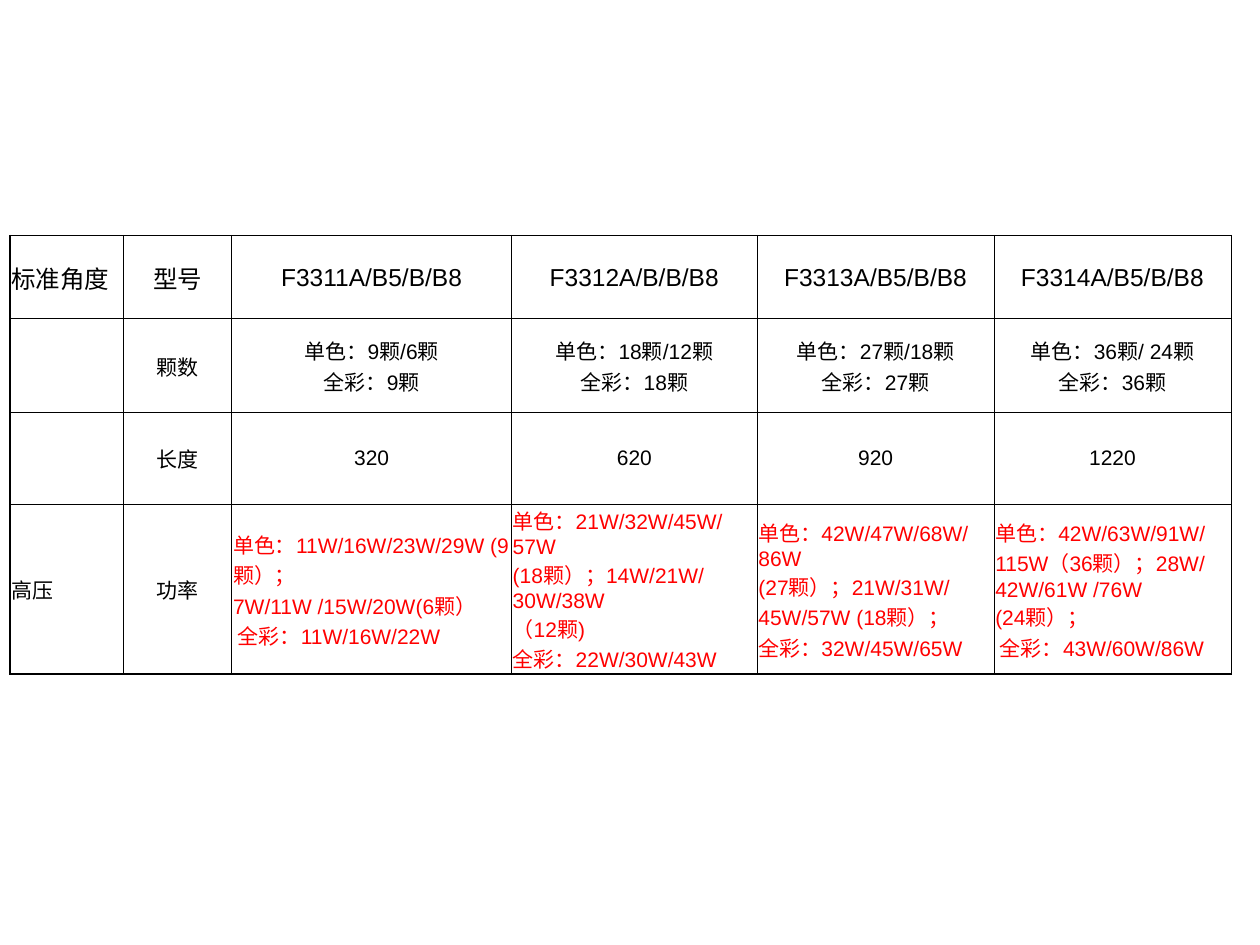
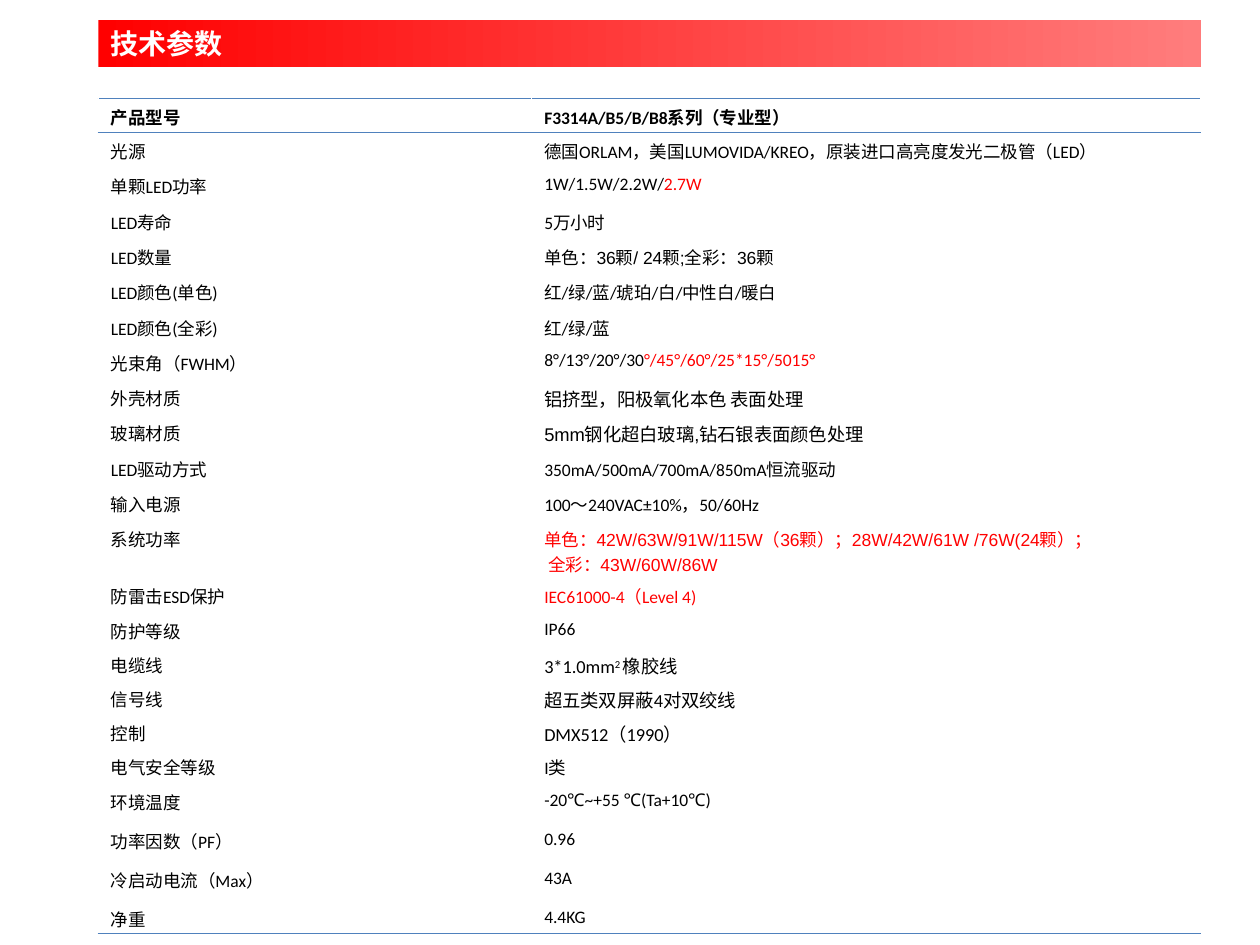
from dataclasses import dataclass

from lxml import etree
from pptx import Presentation
from pptx.dml.color import RGBColor
from pptx.enum.shapes import MSO_SHAPE as Shape
from pptx.enum.text import MSO_ANCHOR as Anchor, PP_ALIGN as Align
from pptx.oxml.ns import qn
from pptx.util import Inches, Pt


@dataclass(frozen=True)
class Theme:
    black: str = "000000"
    white: str = "FFFFFF"
    red: str = "FF0000"
    pale_red: str = "FF7D7D"
    blue: str = "4F81BD"
    sans: str = "Arial"
    body: str = "Calibri"
    chinese: str = "Noto Sans CJK SC"
    title: float = 16
    heading: float = 14
    label: float = 12
    large: float = 10.5
    small: float = 10


@dataclass(frozen=True)
class Span:
    """A run of text with its style."""
    text: str
    size: float
    font: str
    color: str = Theme.black
    bold: bool = False
    raised: bool = False


class Builder:
    def __init__(self, theme):
        self.theme = theme
        self.deck = Presentation()
        self.deck.slide_width, self.deck.slide_height = Inches(10), Inches(7.5)
        self.page = None

    def new_page(self):
        self.page = self.deck.slides.add_slide(self.deck.slide_layouts[6])

    def add_text(self, frame, paragraphs, align=Align.LEFT):
        """Fill a text frame with paragraphs, each a list of spans."""
        for index, spans in enumerate(paragraphs):
            para = frame.add_paragraph() if index else frame.paragraphs[0]
            para.alignment = align
            for span in spans:
                run = para.add_run()
                run.text = span.text
                run.font.size, run.font.bold = Pt(span.size), span.bold
                run.font.color.rgb = RGBColor.from_string(span.color)
                run.font.name = span.font
                props = run._r.get_or_add_rPr()
                etree.SubElement(props, qn("a:ea"), typeface=self.theme.chinese)
                if span.raised:
                    props.set("baseline", "30000")

    def band(self, text, left, top, width, height):
        box = self.page.shapes.add_shape(
            Shape.RECTANGLE, Inches(left), Inches(top), Inches(width), Inches(height))
        box.shadow.inherit = False
        box.line.fill.background()
        box.fill.gradient()
        box.fill.gradient_angle = 0
        for stop, color in zip(box.fill.gradient_stops,
                               (self.theme.red, self.theme.pale_red)):
            stop.color.rgb = RGBColor.from_string(color)
        frame = box.text_frame
        frame.word_wrap = True
        frame.vertical_anchor = Anchor.MIDDLE
        self.add_text(frame, [[Span(text, self.theme.title, self.theme.chinese,
                                    self.theme.white, bold=True)]])

    def table(self, left, top, widths, heights):
        table = self.page.shapes.add_table(
            len(heights), len(widths), Inches(left), Inches(top),
            Inches(sum(widths)), Inches(sum(heights))).table
        table.first_row = table.horz_banding = False
        for column, width in zip(table.columns, widths):
            column.width = Inches(width)
        for row, height in zip(table.rows, heights):
            row.height = Inches(height)
        return table

    def cell(self, cell, paragraphs, margins, borders, color, fill=None,
             anchor=Anchor.TOP, align=Align.LEFT):
        """Style one cell; borders maps a side (L, R, T, B) to a width in points."""
        (cell.margin_left, cell.margin_top,
         cell.margin_right, cell.margin_bottom) = map(Inches, margins)
        cell.vertical_anchor = anchor
        props = cell._tc.get_or_add_tcPr()
        for side in "LRTB":
            if side in borders:
                line = etree.SubElement(props, qn("a:ln" + side), w=str(Pt(borders[side])))
                solid = etree.SubElement(line, qn("a:solidFill"))
                etree.SubElement(solid, qn("a:srgbClr"), val=color)
        if fill:
            cell.fill.solid()
            cell.fill.fore_color.rgb = RGBColor.from_string(fill)
        else:
            cell.fill.background()
        self.add_text(cell.text_frame, paragraphs, align)


MODELS = [
    ["标准角度", "型号", "F3311A/B5/B/B8", "F3312A/B/B/B8", "F3313A/B5/B/B8",
     "F3314A/B5/B/B8"],
    ["", "颗数", "单色：9颗/6颗\n全彩：9颗", "单色：18颗/12颗\n全彩：18颗",
     "单色：27颗/18颗\n全彩：27颗", "单色：36颗/ 24颗\n全彩：36颗"],
    ["", "长度", "320", "620", "920", "1220"],
    ["高压", "功率",
     "单色：11W/16W/23W/29W (9颗）；\n7W/11W /15W/20W(6颗）\n 全彩：11W/16W/22W",
     "单色：21W/32W/45W/57W\n(18颗）；14W/21W/30W/38W\n（12颗)\n全彩：22W/30W/43W",
     "单色：42W/47W/68W/86W\n(27颗）；21W/31W/45W/57W (18颗）；\n全彩：32W/45W/65W",
     "单色：42W/63W/91W/115W（36颗）；28W/42W/61W /76W\n(24颗）；\n 全彩：43W/60W/86W"],
]


def models_slide(builder):
    theme = builder.theme
    builder.new_page()
    table = builder.table(0.08, 1.87, [0.9, 0.86, 2.22, 1.95, 1.88, 1.88],
                          [0.66, 0.74, 0.73, 1.35])
    last = len(MODELS) - 1
    for r, texts in enumerate(MODELS):
        for c, text in enumerate(texts):
            is_power = r == last and c > 1
            size = theme.label if r else theme.heading
            font = theme.sans if c > 1 else theme.chinese
            color = theme.red if is_power else theme.black
            lines = [[Span(line, size, font, color)] for line in text.splitlines()]
            borders = {"L": 0.5 if c else 1, "R": 0.5,
                       "T": 0.5 if r else 1, "B": 1 if r == last else 0.5}
            builder.cell(table.cell(r, c), lines, (0.01, 0.01, 0.01, 0), borders,
                         theme.black, theme.white if c else None, Anchor.MIDDLE,
                         Align.LEFT if is_power or c == 0 else Align.CENTER)


def plain(text, size=Theme.small, font=Theme.body, color=Theme.black, **style):
    return [[Span(text, size, font, color, **style)]]


def two_tone(text, red_text):
    return [plain(text)[0] + plain(red_text, color=Theme.red)[0]]


def large(text, font=Theme.body):
    return plain(text, Theme.large, font)


SPECS = [
    ("光源", plain("德国ORLAM，美国LUMOVIDA/KREO，原装进口高亮度发光二极管（LED）")),
    ("单颗LED功率", two_tone("1W/1.5W/2.2W/", "2.7W")),
    ("LED寿命", plain("5万小时")),
    ("LED数量", plain("单色：36颗/ 24颗;全彩：36颗", font=Theme.sans)),
    ("LED颜色(单色)", plain("红/绿/蓝/琥珀/白/中性白/暖白")),
    ("LED颜色(全彩)", plain("红/绿/蓝")),
    ("光束角（FWHM）", two_tone("8°/13°/20°/30", "°/45°/60°/25*15°/5015°")),
    ("外壳材质", large("铝挤型，阳极氧化本色 表面处理")),
    ("玻璃材质", large("5mm钢化超白玻璃,钻石银表面颜色处理", Theme.sans)),
    ("LED驱动方式", plain("350mA/500mA/700mA/850mA恒流驱动")),
    ("输入电源", plain("100～240VAC±10%，50/60Hz")),
    ("系统功率",
     plain("单色：42W/63W/91W/115W（36颗）；28W/42W/61W /76W(24颗）；",
           font=Theme.sans, color=Theme.red)
     + plain(" 全彩：43W/60W/86W", font=Theme.sans, color=Theme.red)),
    ("防雷击ESD保护", plain("IEC61000-4（Level 4)", color=Theme.red)),
    ("防护等级", plain("IP66")),
    ("电缆线", [[Span("3*1.0mm", Theme.large, Theme.body),
              Span("2 ", Theme.large, Theme.body, raised=True),
              Span("橡胶线", Theme.large, Theme.body)]]),
    ("信号线", large("超五类双屏蔽4对双绞线")),
    ("控制", large("DMX512（1990）")),
    ("电气安全等级", plain("I类")),
    ("环境温度", plain("-20℃~+55 ℃(Ta+10℃)")),
    ("功率因数（PF）", plain("0.96")),
    ("冷启动电流（Max）", plain("43A")),
    ("净重", plain("4.4KG")),
]


def specs_slide(builder):
    theme = builder.theme
    builder.new_page()
    heights = [0.27] + [0.28] * 11 + [0.44, 0.28] + [0.27] * 4 + [0.28] + [0.31] * 3 + [0.26]
    table = builder.table(0.78, 0.78, [3.44, 5.31], heights)
    header = (plain("产品型号", bold=True),
              plain("F3314A/B5/B/B8系列（专业型）", bold=True))
    rows = [header] + [(plain(name), value) for name, value in SPECS]
    borders = {0: {"T": 1, "B": 1}, 1: {"T": 1}, len(SPECS): {"B": 1}}
    for r, row in enumerate(rows):
        for c, paragraphs in enumerate(row):
            builder.cell(table.cell(r, c), paragraphs, (0.1, 0.05, 0.1, 0),
                         borders.get(r, {}), theme.blue)
    builder.band("技术参数", 0.78, 0.16, 8.75, 0.37)


def main():
    builder = Builder(Theme())
    models_slide(builder)
    specs_slide(builder)
    builder.deck.save("out.pptx")


if __name__ == "__main__":
    main()
